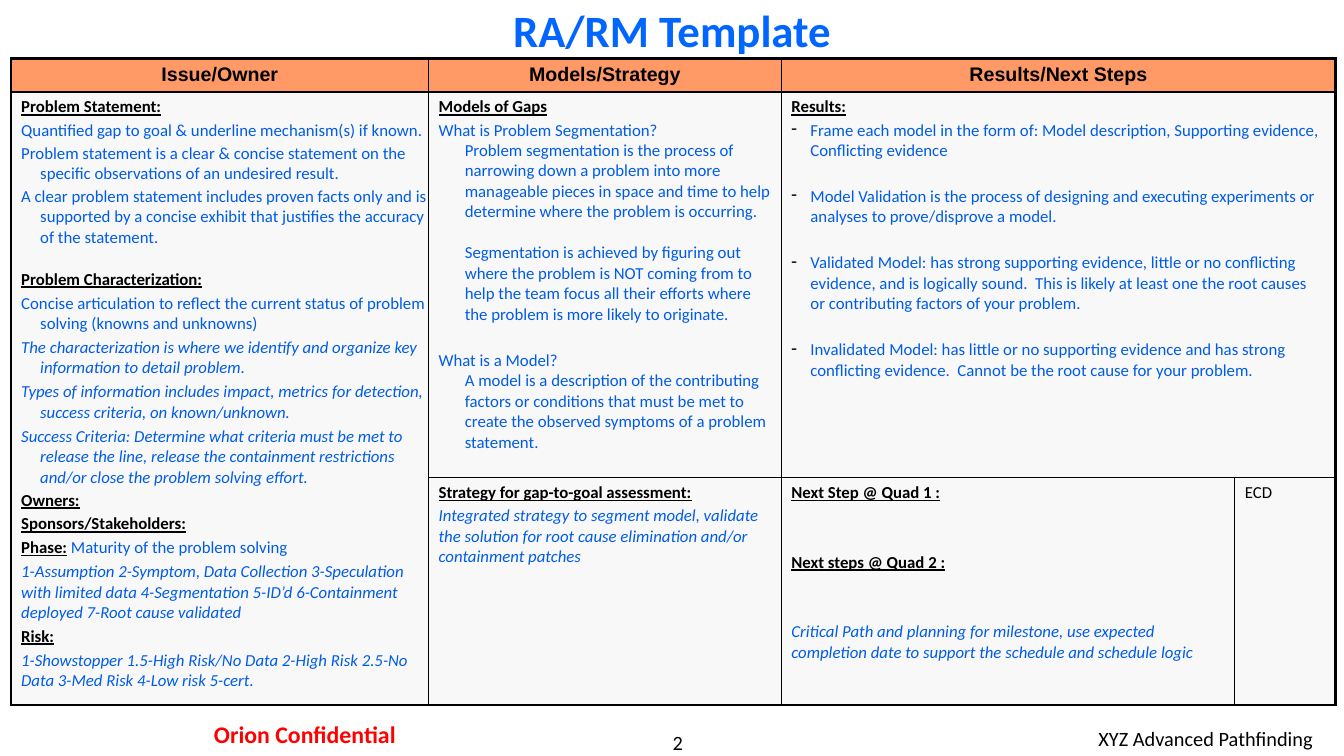
import pptx
import pptx.util
import pptx.dml.color
import pptx.enum.text
import pptx.oxml
import pptx.oxml.ns

Cm, Pt = pptx.util.Cm, pptx.util.Pt
ALIGN = pptx.enum.text.PP_ALIGN
MIDDLE = pptx.enum.text.MSO_ANCHOR.MIDDLE

COLORS = {"black": "000000", "title": "0066FF", "blue": "005CE7", "red": "FF0000",
          "header": "FF9966", "body": "F8F8F8"}

# style name: colour, bold, italic, underline
STYLES = {
    "head": ("black", True, False, True),
    "label": ("black", True, False, False),
    "plain": ("black", False, False, False),
    "blue": ("blue", False, False, False),
    "note": ("blue", False, True, False),
    "title": ("title", True, False, False),
    "red": ("red", True, False, False),
}


def style_span(span, style, size, font="Calibri"):
    color, bold, italic, underline = STYLES[style]
    span.font.name = font
    span.font.size = Pt(size)
    span.font.color.rgb = pptx.dml.color.RGBColor.from_string(COLORS[color])
    span.font.bold, span.font.italic, span.font.underline = bold, italic, underline


def add_xml(parent, xml, index=None):
    element = pptx.oxml.parse_xml(xml.replace(" ", f" {pptx.oxml.ns.nsdecls('a')} ", 1))
    parent.insert(len(parent) if index is None else index, element)


deck = pptx.Presentation()
deck.slide_width, deck.slide_height = Cm(33.87), Cm(19.05)
page = deck.slides.add_slide(deck.slide_layouts[6])

# Title and footer: text, left, top, width, height, style, size, alignment
for text, left, top, width, height, style, size, align in [
    ("2", 14.12, 18.39, 5.92, 0.61, "plain", 14.5, ALIGN.CENTER),
    ("XYZ Advanced Pathfinding", 22.43, 18.29, 10.9, 0.64, "plain", 14.5, ALIGN.RIGHT),
    ("Orion Confidential", 3.94, 18.13, 7.49, 0.74, "red", 17, ALIGN.CENTER),
    ("RA/RM Template", 4.24, 0.05, 25.4, 1.4, "title", 32, ALIGN.CENTER),
]:
    box = page.shapes.add_textbox(Cm(left), Cm(top), Cm(width), Cm(height))
    frame = box.text_frame
    frame.word_wrap = True
    frame.margin_top = frame.margin_bottom = 0
    frame.vertical_anchor = MIDDLE
    frame.text = text
    frame.paragraphs[0].alignment = align
    style_span(frame.paragraphs[0].runs[0], style, size)

# Table grid
widths, heights = [10.52, 8.89, 11.43, 2.54], [0.84, 9.72, 5.73]
table = page.shapes.add_table(3, 4, Cm(0.28), Cm(1.47), Cm(sum(widths)), Cm(sum(heights))).table
table.first_row = table.horz_banding = False
for column, width in zip(table.columns, widths):
    column.width = Cm(width)
for row, height in zip(table.rows, heights):
    row.height = Cm(height)
table.cell(0, 2).merge(table.cell(0, 3))
table.cell(1, 2).merge(table.cell(1, 3))
table.cell(1, 0).merge(table.cell(2, 0))

# Fills and borders: heavy around the table and under the header
for r in range(3):
    for c in range(4):
        cell = table.cell(r, c)
        if cell.is_spanned:
            continue
        last_row, last_column = r, c
        if cell.is_merge_origin:
            last_row, last_column = r + cell.span_height - 1, c + cell.span_width - 1
        cell.fill.solid()
        cell.fill.fore_color.rgb = pptx.dml.color.RGBColor.from_string(
            COLORS["body" if r else "header"])
        heavy = {"L": c == 0, "R": last_column == 3, "T": r < 2, "B": last_row in (0, 2)}
        for index, (side, is_heavy) in enumerate(heavy.items()):
            add_xml(cell._tc.get_or_add_tcPr(),
                    f'<a:ln{side} w="{28575 if is_heavy else 12700}"><a:solidFill>'
                    f'<a:srgbClr val="{COLORS["black"]}"/></a:solidFill></a:ln{side}>', index)

# Header row
for c, text in enumerate(["Issue/Owner", "Models/Strategy", "Results/Next Steps"]):
    cell = table.cell(0, c)
    cell.vertical_anchor = MIDDLE
    cell.text_frame.text = text
    cell.text_frame.paragraphs[0].alignment = ALIGN.CENTER
    style_span(cell.text_frame.paragraphs[0].runs[0], "label", 14, "Arial")

# Paragraph layouts: left margin and first-line indent in cm
LAYOUTS = {"flat": (0, 0), "hang": (0.48, -0.48), "dash": (0.48, -0.48), "inset": (0.66, 0)}
TIGHT, LOOSE, BREAK, LINE, WIDE = 1.8, 2.4, 18.2, 14.6, 35

# Cell position: paragraphs as space before, layout, then style and text of each span
contents = {
    (1, 0): [
        (0, "flat", ("head", "Problem Statement:")),
        (TIGHT, "flat", ("blue", "Quantified gap to goal & underline mechanism(s) if known.")),
        (TIGHT, "hang", ("blue", "Problem statement is a clear & concise statement on the specific observations of an undesired result.")),
        (TIGHT, "hang", ("blue", "A clear problem statement includes proven facts only and is supported by a concise exhibit that justifies the accuracy of the statement.")),
        (15.2, "flat", ("head", "Problem Characterization:")),
        (LOOSE, "hang", ("blue", "Concise articulation to reflect the current status of problem solving (knowns and unknowns)")),
        (LOOSE, "hang", ("note", "The characterization is where we identify and organize key information to detail problem.")),
        (LOOSE, "hang", ("note", "Types of information includes impact, metrics for detection, success criteria, on known/unknown.")),
        (LOOSE, "hang", ("note", "Success Criteria: Determine what criteria must be met to release the line, release the containment restrictions and/or close the problem solving effort.")),
        (TIGHT, "flat", ("head", "Owners:")),
        (LOOSE, "flat", ("head", "Sponsors/Stakeholders:")),
        (LOOSE, "flat", ("head", "Phase:"), ("blue", " Maturity of the problem solving")),
        (LOOSE, "flat", ("note", "1-Assumption 2-Symptom, Data Collection 3-Speculation with limited data 4-Segmentation 5-ID’d 6-Containment deployed 7-Root cause validated")),
        (LOOSE, "flat", ("head", "Risk:")),
        (LOOSE, "flat", ("note", "1-Showstopper 1.5-High Risk/No Data 2-High Risk 2.5-No Data 3-Med Risk 4-Low risk 5-cert.")),
    ],
    (1, 1): [
        (0, "flat", ("head", "Models of Gaps")),
        (TIGHT, "flat", ("blue", "What is Problem Segmentation?")),
        (0, "inset", ("blue", "Problem segmentation is the process of narrowing down a problem into more manageable pieces in space and time to help determine where the problem is occurring.")),
        (LINE, "inset", ("blue", "Segmentation is achieved by figuring out where the problem is NOT coming from to help the team focus all their efforts where the problem is more likely to originate.")),
        (BREAK, "flat", ("blue", "What is a Model?")),
        (0, "inset", ("blue", "A model is a description of the contributing factors or conditions that must be met to create the observed symptoms of a problem statement.")),
    ],
    (1, 2): [
        (0, "flat", ("head", "Results:")),
        (TIGHT, "dash", ("blue", "Frame each model in the form of: Model description, Supporting evidence, Conflicting evidence")),
        (BREAK, "dash", ("blue", "Model Validation is the process of designing and executing experiments or analyses to prove/disprove a model.")),
        (BREAK, "dash", ("blue", "Validated Model: has strong supporting evidence, little or no conflicting evidence, and is logically sound.  This is likely at least one the root causes or contributing factors of your problem.")),
        (BREAK, "dash", ("blue", "Invalidated Model: has little or no supporting evidence and has strong conflicting evidence.  Cannot be the root cause for your problem.")),
    ],
    (2, 1): [
        (0, "flat", ("head", "Strategy for gap-to-goal assessment:")),
        (TIGHT, "flat", ("note", "Integrated strategy to segment model, validate the solution for root cause elimination and/or containment patches")),
    ],
    (2, 2): [
        (0, "flat", ("head", "Next Step @ Quad 1 :")),
        (WIDE, "flat", ("head", "Next steps @ Quad 2 :")),
        (WIDE, "flat", ("note", "Critical Path and planning for milestone, use expected completion date to support the schedule and schedule logic")),
    ],
    (2, 3): [(0, "flat", ("plain", "ECD"))],
}

# Body cells
table.cell(1, 0).margin_right = Cm(0.03)
for (r, c), paragraphs in contents.items():
    frame = table.cell(r, c).text_frame
    for number, (space, layout, *spans) in enumerate(paragraphs):
        para = frame.add_paragraph() if number else frame.paragraphs[0]
        if space:
            para.space_before = Pt(space)
        margin, indent = LAYOUTS[layout]
        properties = para._p.get_or_add_pPr()
        properties.set("marL", str(Cm(margin)))
        properties.set("indent", str(Cm(indent)))
        if layout == "dash":
            add_xml(properties, f'<a:buClr ><a:srgbClr val="{COLORS["black"]}"/></a:buClr>')
            add_xml(properties, '<a:buChar char="-"/>')
        for style, text in spans:
            span = para.add_run()
            span.text = text
            style_span(span, style, 12)

deck.save("out.pptx")
